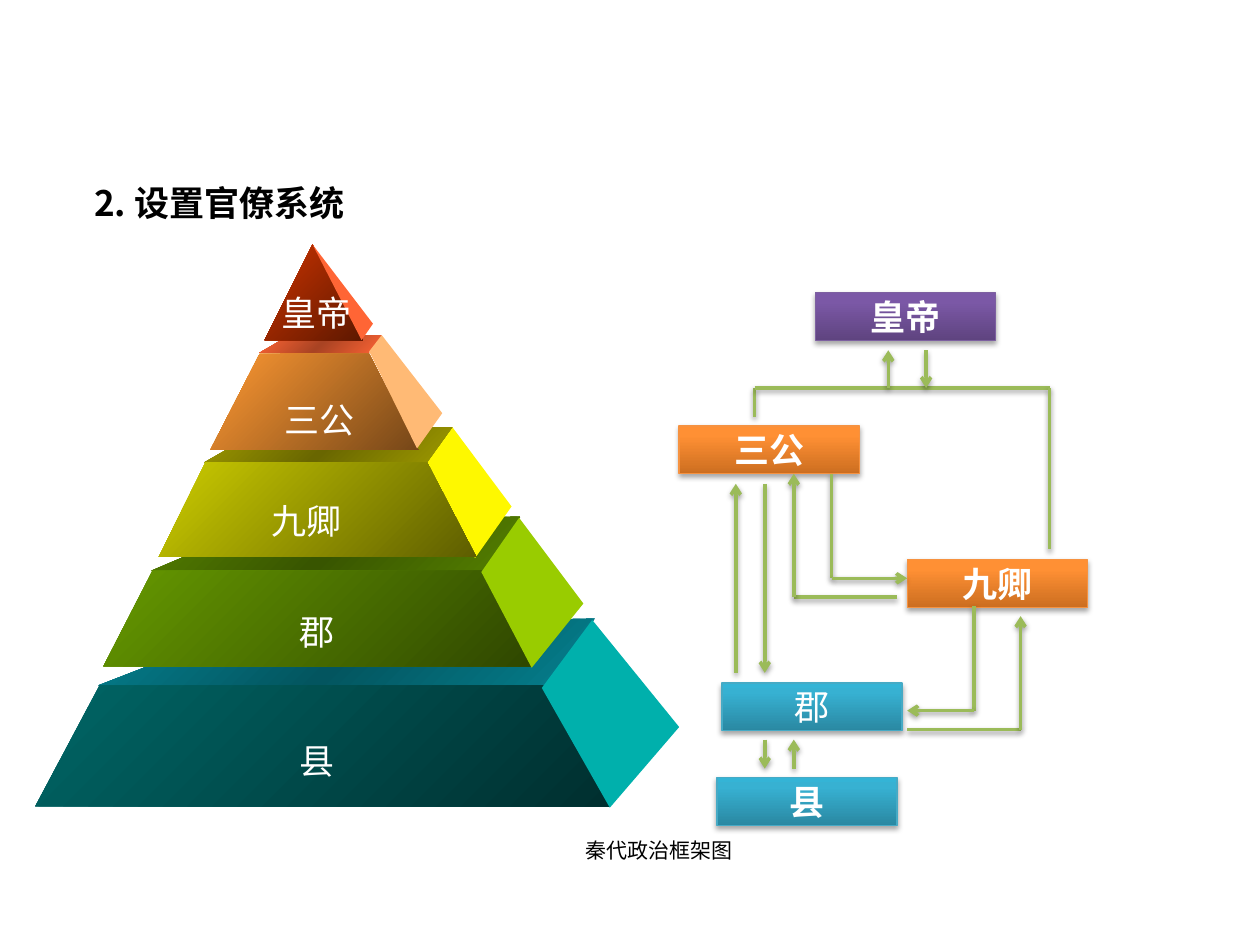
import dataclasses

import lxml.etree
import pptx
import pptx.dml.color
import pptx.enum.shapes
import pptx.enum.text
import pptx.oxml.ns
import pptx.util

Inches = pptx.util.Inches
Pt = pptx.util.Pt


@dataclasses.dataclass(frozen=True)
class Theme:
    font: str = "Noto Sans CJK SC"
    paper: str = "FFFFFF"
    ink: str = "000000"
    arrow: str = "9BBB59"
    large: int = 20
    small: int = 12
    edge: float = 0.75
    stroke: float = 2
    violet: tuple = ("7D60A0", (0, "5F4480"), (80, "7B58A6"), (100, "7C57A8"))
    orange: tuple = ("F69240", (0, "CC6E20"), (80, "FF9034"), (100, "FF9136"))
    blue: tuple = ("46AAC5", (0, "2A88A2"), (80, "37B1D2"), (100, "34B4D6"))


def rgb(code):
    return pptx.dml.color.RGBColor.from_string(code)


def child(node, tag, **props):
    return lxml.etree.SubElement(node, pptx.oxml.ns.qn(tag), props)


class Painter:
    def __init__(self, slide, theme):
        self.slide = slide
        self.theme = theme
        fill = slide.background.fill
        fill.solid()
        fill.fore_color.rgb = rgb(theme.paper)

    def blend(self, shape, stops, angle):
        shape.fill.gradient()
        shape.fill.gradient_angle = angle
        bands = shape._element.spPr.find(".//" + pptx.oxml.ns.qn("a:gsLst"))
        for old in list(bands):
            bands.remove(old)
        for place, code in stops:
            stop = child(bands, "a:gs", pos=str(place * 1000))
            child(stop, "a:srgbClr", val=code)

    def shade(self, effects, alpha, dist):
        cast = child(effects, "a:outerShdw", blurRad=str(Pt(3.1)), dist=str(Pt(dist)),
                     dir="5400000", rotWithShape="0")
        tint = child(cast, "a:srgbClr", val=self.theme.ink)
        child(tint, "a:alpha", val=str(alpha * 1000))

    def letter(self, frame, words, size, color, bold=False, align=None, space=None):
        para = frame.paragraphs[0]
        para.alignment = align
        para.line_spacing = space
        run = para.add_run()
        run.text = words
        run.font.size = Pt(size)
        run.font.bold = bold
        run.font.color.rgb = rgb(color)
        run.font.name = self.theme.font
        child(run.font._element, "a:ea", typeface=self.theme.font)

    def text(self, area, words, size, color, wrap=True, **style):
        frame = self.slide.shapes.add_textbox(*map(Inches, area)).text_frame
        frame.word_wrap = wrap
        frame.auto_size = pptx.enum.text.MSO_AUTO_SIZE.SHAPE_TO_FIT_TEXT
        self.letter(frame, words, size, color, **style)

    def face(self, points, paint):
        first, *rest = [(Inches(x), Inches(y)) for x, y in points]
        pen = self.slide.shapes.build_freeform(*first)
        pen.add_line_segments(rest, close=True)
        shape = pen.convert_to_shape()
        shape.shadow.inherit = False
        shape.line.fill.background()
        if isinstance(paint, str):
            shape.fill.solid()
            shape.fill.fore_color.rgb = rgb(paint)
        else:
            last = len(paint) - 1
            stops = [(100 * i // last, code) for i, code in enumerate(paint)]
            self.blend(shape, stops, 315)

    def box(self, left, top, words, style, bold=True):
        shape = self.slide.shapes.add_shape(
            pptx.enum.shapes.MSO_SHAPE.RECTANGLE,
            Inches(left), Inches(top), Inches(1.43), Inches(0.38))
        edge, *stops = style
        self.blend(shape, stops, 90)
        shape.line.color.rgb = rgb(edge)
        shape.line.width = Pt(self.theme.edge)
        shape.shadow.inherit = False
        self.shade(shape._element.spPr.find(pptx.oxml.ns.qn("a:effectLst")), 35, 1.8)
        frame = shape.text_frame
        frame.word_wrap = False
        frame.vertical_anchor = pptx.enum.text.MSO_ANCHOR.MIDDLE
        self.letter(frame, words, self.theme.large, self.theme.paper, bold,
                    pptx.enum.text.PP_ALIGN.CENTER)

    def route(self, points, arrow=True):
        for start, end in zip(points, points[1:]):
            line = self.slide.shapes.add_connector(
                pptx.enum.shapes.MSO_CONNECTOR.STRAIGHT, *map(Inches, start + end))
            line.line.color.rgb = rgb(self.theme.arrow)
            line.line.width = Pt(self.theme.stroke)
            props = line._element.spPr
            if arrow and end == points[-1]:
                child(props.find(pptx.oxml.ns.qn("a:ln")), "a:tailEnd", type="arrow")
            self.shade(child(props, "a:effectLst"), 38, 1.6)


FACES = [
    ([(0.78, 5.44), (4.31, 5.45), (4.72, 4.91), (2.02, 4.96)], ("05808F", "03555F", "05808F")),
    ([(0.28, 6.4), (4.84, 6.4), (4.31, 5.44), (0.79, 5.44)], ("006666", "002F2F")),
    ([(4.84, 6.41), (5.39, 5.77), (4.7, 4.92), (4.3, 5.46)], "00B0AC"),
    ([(1.2, 4.53), (3.83, 4.53), (4.13, 4.1), (2.12, 4.14)], ("558000", "385500", "558000")),
    ([(0.82, 5.29), (4.22, 5.29), (3.83, 4.53), (1.21, 4.53)], ("669900", "2F4700")),
    ([(4.22, 5.3), (4.63, 4.79), (4.12, 4.11), (3.82, 4.54)], "99CC00"),
    ([(3.38, 3.67), (3.77, 4.43), (4.06, 4.02), (3.59, 3.39)], "FEF800"),
    ([(1.62, 3.67), (3.39, 3.67), (3.59, 3.39), (2.11, 3.39)], ("9E9A00", "696600", "9E9A00")),
    ([(1.26, 4.42), (3.78, 4.42), (3.39, 3.67), (1.63, 3.67)], ("CCCC00", "5E5E00")),
    ([(2.06, 2.8), (2.92, 2.81), (3.03, 2.66), (2.3, 2.66)], ("FF6535", "A94323", "FF6535")),
    ([(1.67, 3.57), (3.32, 3.57), (2.93, 2.81), (2.06, 2.81)], ("FF9933", "764718")),
    ([(3.31, 3.56), (3.51, 3.28), (3.03, 2.66), (2.93, 2.79)], "FFBA75"),
    ([(2.1, 2.7), (2.88, 2.7), (2.48, 1.94)], ("CC3300", "5E1800")),
    ([(2.87, 2.7), (2.96, 2.57), (2.48, 1.94)], "FF6535"),
]

LABELS = [
    ("皇帝", (1.7, 2.1, 1.63, 0.61), True),
    ("三公", (2.16, 2.95, 0.76, 0.53), False),
    ("九卿", (2.05, 3.75, 0.76, 0.53), False),
    ("郡", (2.28, 4.63, 0.48, 0.53), False),
    ("县", (2.28, 5.65, 0.48, 0.53), False),
]

ROUTES = [
    [(7.05, 3.08), (7.05, 2.78)],
    [(7.35, 2.78), (7.35, 3.08)],
    [(6.6, 3.76), (6.6, 4.59), (7.2, 4.59)],
    [(7.12, 4.74), (6.3, 4.74), (6.3, 3.76)],
    [(6.07, 3.84), (6.07, 5.34)],
    [(5.84, 5.34), (5.84, 3.84)],
    [(7.73, 4.81), (7.73, 5.64), (7.2, 5.64)],
    [(7.2, 5.79), (8.1, 5.79), (8.1, 4.89)],
    [(6.07, 5.87), (6.07, 6.1)],
    [(6.3, 6.1), (6.3, 5.87)],
]


def main():
    deck = pptx.Presentation()
    deck.slide_width, deck.slide_height = Inches(10), Inches(7.5)
    theme = Theme()
    art = Painter(deck.slides.add_slide(deck.slide_layouts[6]), theme)
    center = pptx.enum.text.PP_ALIGN.CENTER

    for points, paint in FACES:
        art.face(points, paint)
    for words, area, wrap in LABELS:
        art.text(area, words, theme.large, theme.paper, wrap, align=center, space=1.5)

    art.box(6.47, 2.32, "皇帝", theme.violet)
    art.box(7.2, 4.44, "九卿", theme.orange)
    art.box(5.39, 3.38, "三公", theme.orange)
    art.box(5.73, 5.42, "郡", theme.blue, bold=False)
    art.box(5.69, 6.17, "县", theme.blue)

    art.route([(5.99, 3.31), (5.99, 3.08), (8.33, 3.08), (8.33, 4.36)], arrow=False)
    for points in ROUTES:
        art.route(points)

    art.text((4.29, 6.6, 1.72, 0.3), "　秦代政治框架图", theme.small, theme.ink, align=center)
    art.text((0.65, 1.39, 2.49, 0.44), "2. 设置官僚系统", theme.large, theme.ink, bold=True)
    deck.save("out.pptx")


if __name__ == "__main__":
    main()
